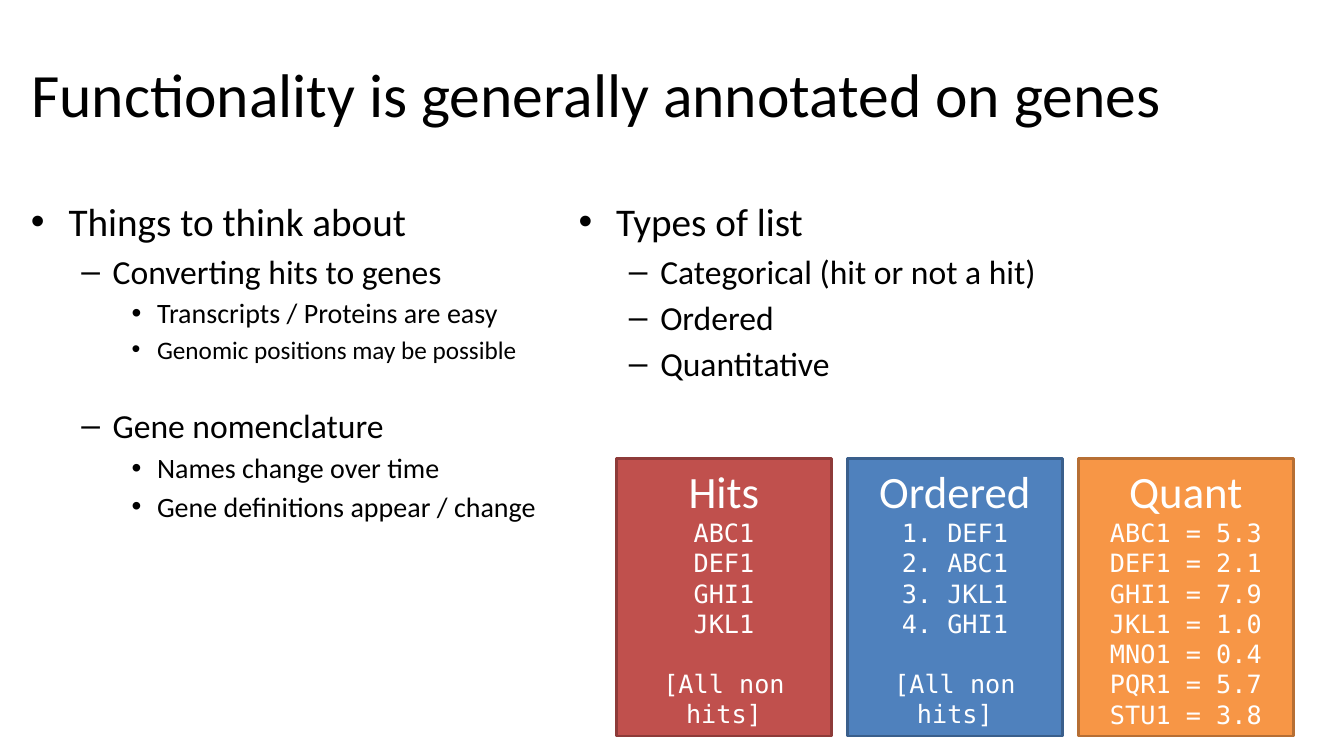
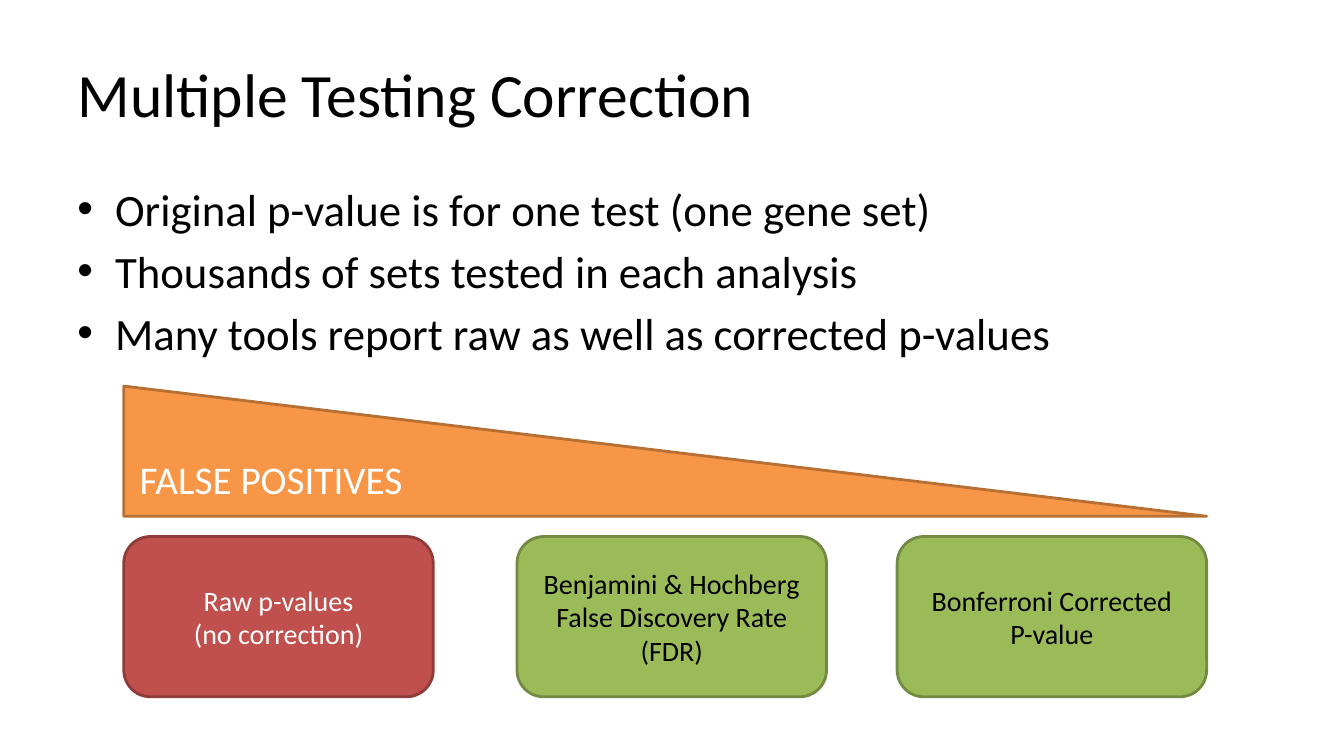
from lxml import etree
from pptx import Presentation
from pptx.dml.color import RGBColor
from pptx.enum.shapes import MSO_SHAPE
from pptx.enum.text import MSO_ANCHOR, MSO_AUTO_SIZE, PP_ALIGN
from pptx.oxml.ns import qn
from pptx.util import Cm, Pt

RECTANGLE, ROUNDED = MSO_SHAPE.RECTANGLE, MSO_SHAPE.ROUNDED_RECTANGLE
TOP, MIDDLE, BOTTOM = MSO_ANCHOR.TOP, MSO_ANCHOR.MIDDLE, MSO_ANCHOR.BOTTOM
LEFT, CENTER = PP_ALIGN.LEFT, PP_ALIGN.CENTER
TITLE_ONLY = 5

BLACK, WHITE = "000000", "FFFFFF"
# Each scheme is a fill and its outline
RED, BLUE = ("C0504D", "8E3B39"), ("4F81BD", "3A5F8C")
ORANGE, GREEN = ("F79646", "B76F34"), ("9BBB59", "738A42")
FONT, MONO = "Calibri", "DejaVu Sans Mono"

# Bullet character, text indent and hanging indent (cm) for each level
BULLETS = [("•", 0.95, 0.95), ("–", 2.06, 0.79), ("•", 3.18, 0.64)]
BULLET_SPACING = 0.18  # space before, as a share of the text size


def color(value):
    return RGBColor.from_string(value)


def set_format(target, values):
    for name, value in values.items():
        setattr(target, name, value)


class Deck:
    """Holds the shared style and the slide being built."""

    def __init__(self):
        self.file = Presentation()
        self.file.slide_width, self.file.slide_height = Cm(33.87), Cm(19.05)
        self.page = None

    def add_page(self, title, left):
        self.page = self.file.slides.add_slide(self.file.slide_layouts[TITLE_ONLY])
        box = self.page.shapes.title
        set_format(box, {"left": Cm(left), "top": Cm(0.74),
                         "width": Cm(30.48), "height": Cm(3.18)})
        self.frame(box, MIDDLE)
        self.add_text(box.text_frame.paragraphs[0], title, 44)

    def frame(self, box, anchor):
        set_format(box.text_frame, {"word_wrap": True, "vertical_anchor": anchor,
                                    "auto_size": MSO_AUTO_SIZE.NONE})

    def add_text(self, para, text, size, ink=BLACK, font=FONT, align=LEFT, before=0):
        set_format(para, {"alignment": align, "space_before": Pt(before)})
        span = para.add_run()
        span.text = text
        set_format(span.font, {"name": font, "size": Pt(size)})
        span.font.color.rgb = color(ink)

    def paragraphs(self, box, count):
        """Return count paragraphs, starting with the one already there."""
        frame = box.text_frame
        return [frame.paragraphs[0]] + [frame.add_paragraph() for _ in range(count - 1)]

    def bullets(self, left, top, width, height, items):
        """Items are (level, size, text), with optional extra space before."""
        box = self.page.shapes.add_textbox(Cm(left), Cm(top), Cm(width), Cm(height))
        self.frame(box, TOP)
        paras = self.paragraphs(box, len(items))
        for index, (para, item) in enumerate(zip(paras, items)):
            level, size, text, *extra = item
            self.add_bullet(para, level)
            before = round(size * BULLET_SPACING + sum(extra), 1) if index else 0
            self.add_text(para, text, size, before=before)

    def add_bullet(self, para, level):
        mark, indent, hanging = BULLETS[level]
        para.level = level
        properties = para._p.get_or_add_pPr()
        properties.set("marL", str(Cm(indent)))
        properties.set("indent", str(-Cm(hanging)))
        etree.SubElement(properties, qn("a:buFont")).set("typeface", "Arial")
        etree.SubElement(properties, qn("a:buChar")).set("char", mark)

    def paint(self, shape, scheme, anchor):
        fill, outline = scheme
        shape.shadow.inherit = False
        shape.fill.solid()
        shape.fill.fore_color.rgb = color(fill)
        shape.line.color.rgb = color(outline)
        shape.line.width = Pt(2)
        self.frame(shape, anchor)

    def block(self, kind, left, top, width, height, scheme, anchor=MIDDLE):
        shape = self.page.shapes.add_shape(kind, Cm(left), Cm(top), Cm(width), Cm(height))
        self.paint(shape, scheme, anchor)
        return shape

    def list_card(self, left, scheme, heading, genes, footer=None):
        card = self.block(RECTANGLE, left, 11.56, 5.41, 6.99, scheme, TOP)
        lines = [(heading, 32, FONT, 0)] + [(gene, 18, MONO, 0) for gene in genes]
        if footer:
            lines.append((footer, 18, MONO, 21.5))
        for para, (text, size, font, before) in zip(self.paragraphs(card, len(lines)), lines):
            self.add_text(para, text, size, WHITE, font, CENTER, before)

    def method_box(self, left, scheme, ink, lines):
        box = self.block(ROUNDED, left, 13.52, 7.8, 4.04, scheme)
        for para, text in zip(self.paragraphs(box, len(lines)), lines):
            self.add_text(para, text, 20, ink, align=CENTER)

    def wedge(self, left, top, width, height, scheme, text):
        """Draw a triangle that is tall on the left and thins to the right."""
        bottom = Cm(top + height)
        builder = self.page.shapes.build_freeform(Cm(left), Cm(top))
        builder.add_line_segments([(Cm(left + width), bottom), (Cm(left), bottom)])
        shape = builder.convert_to_shape()
        self.paint(shape, scheme, BOTTOM)
        set_format(shape.text_frame, {"margin_left": Cm(0.4), "margin_bottom": Cm(0.36)})
        self.add_text(shape.text_frame.paragraphs[0], text, 28, WHITE)


def build_gene_lists(deck):
    deck.add_page("Functionality is generally annotated on genes", 0.53)
    deck.bullets(0.53, 4.85, 13.7, 9.5, [
        (0, 28, "Things to think about"),
        (1, 24, "Converting hits to genes"),
        (2, 20, "Transcripts / Proteins are easy"),
        (2, 18, "Genomic positions may be possible"),
        (1, 24, "Gene nomenclature", 25),
        (2, 20, "Names change over time"),
        (2, 20, "Gene definitions appear / change"),
    ])
    deck.bullets(14.33, 4.85, 18.2, 6, [
        (0, 28, "Types of list"),
        (1, 24, "Categorical (hit or not a hit)"),
        (1, 24, "Ordered"),
        (1, 24, "Quantitative"),
    ])
    cards = [
        (RED, "Hits", ["ABC1", "DEF1", "GHI1", "JKL1"], "[All non hits]"),
        (BLUE, "Ordered", ["1. DEF1", "2. ABC1", "3. JKL1", "4. GHI1"], "[All non hits]"),
        (ORANGE, "Quant", ["ABC1 = 5.3", "DEF1 = 2.1", "GHI1 = 7.9", "JKL1 = 1.0",
                           "MNO1 = 0.4", "PQR1 = 5.7", "STU1 = 3.8"]),
    ]
    for index, card in enumerate(cards):
        deck.list_card(15.54 + index * 5.82, *card)


def build_correction(deck):
    deck.add_page("Multiple Testing Correction", 1.7)
    deck.bullets(1.7, 4.45, 30.48, 5.2, [
        (0, 32, "Original p-value is for one test (one gene set)"),
        (0, 32, "Thousands of sets tested in each analysis"),
        (0, 32, "Many tools report raw as well as corrected p-values"),
    ])
    deck.method_box(3.12, RED, WHITE, ["Raw p-values", "(no correction)"])
    deck.method_box(13.03, GREEN, BLACK,
                    ["Benjamini & Hochberg", "False Discovery Rate", "(FDR)"])
    deck.method_box(22.61, GREEN, BLACK, ["Bonferroni Corrected", "P-value"])
    deck.wedge(3.12, 9.73, 27.29, 3.28, ORANGE, "FALSE POSITIVES")


def main():
    deck = Deck()
    build_gene_lists(deck)
    build_correction(deck)
    deck.file.save("out.pptx")


if __name__ == "__main__":
    main()
